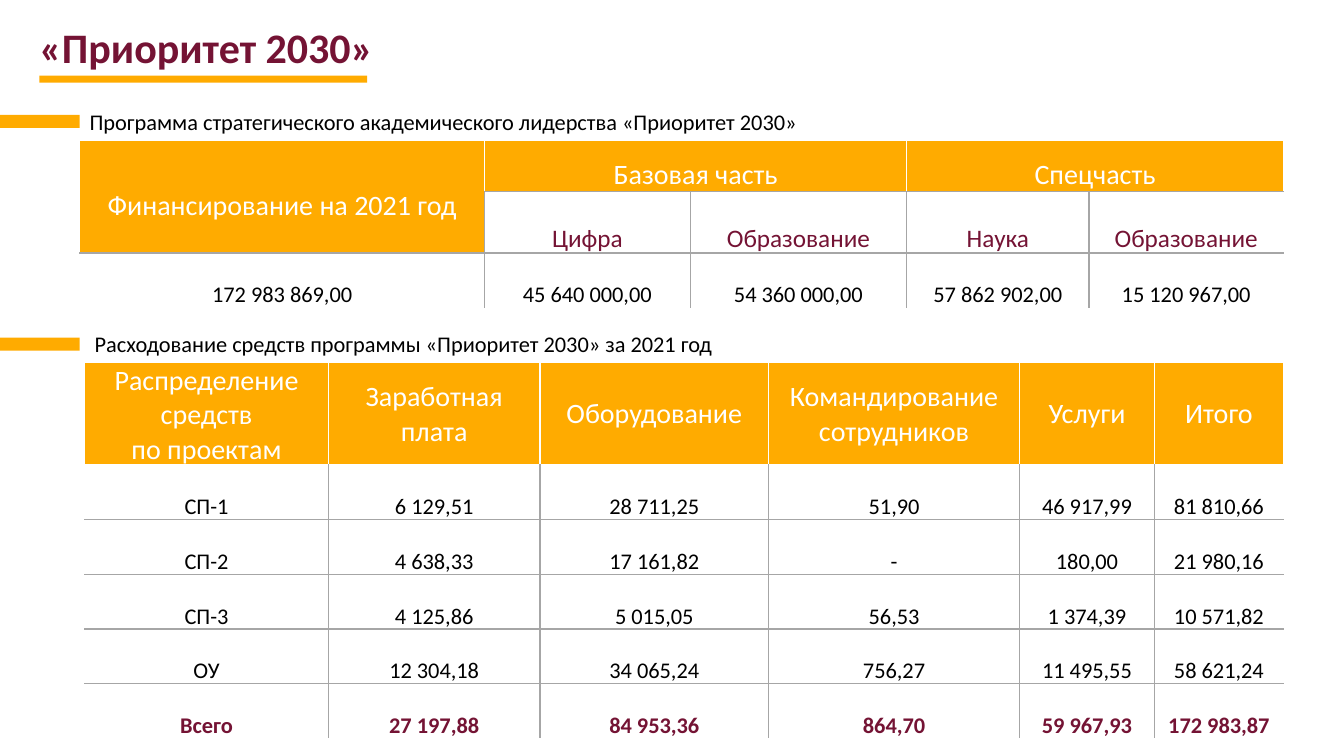
from lxml.etree import SubElement
from pptx import Presentation
from pptx.dml.color import RGBColor
from pptx.enum.shapes import MSO_SHAPE as Shape
from pptx.enum.text import MSO_ANCHOR as Anchor, PP_ALIGN as Align
from pptx.oxml.ns import qn
from pptx.util import Inches, Pt

COLORS = {"amber": "FFAB00", "wine": "741334", "black": "000000",
          "white": "FFFFFF", "gray": "A6A6A6"}
WIDTH, HEIGHT = Inches(13.33), Inches(7.5)
SIDES = {"a:lnL": (0, -1), "a:lnR": (0, 1), "a:lnT": (-1, 0), "a:lnB": (1, 0)}

# Heights in a section, in percent of the slide height
LABEL_HEIGHT, BAR_OFFSET, BAR_HEIGHT = 4.93, 1.6, 1.73
BAR_WIDTH = 5.93

FUNDING = {
    "columns": [402, 204, 215, 181, 193],
    "rows": [50, 61, 55],
    "cells": [
        ["Финансирование на 2021 год", "Базовая часть", "", "Спецчасть", ""],
        ["", "Цифра", "Образование", "Наука", "Образование"],
        ["172 983 869,00", "45 640 000,00", "54 360 000,00",
         "57 862 902,00", "15 120 967,00"],
    ],
    "merges": [((0, 0), (1, 0)), ((0, 1), (0, 2)), ((0, 3), (0, 4))],
    "header": {(0, column) for column in range(5)} | {(1, 0)},
    "header_edge": "gray",
    "header_spacing": 1.5,
    "row_formats": {1: {"size": 18, "color": "wine"}},
}
SPENDING = {
    "columns": [242, 210, 227, 249, 134, 128],
    "rows": [100] + [54] * 5,
    "cells": [
        ["Распределение средств\nпо проектам", "Заработная плата", "Оборудование",
         "Командирование сотрудников", "Услуги", "Итого"],
        ["СП-1", "6 129,51", "28 711,25", "51,90", "46 917,99", "81 810,66"],
        ["СП-2", "4 638,33", "17 161,82", "-", "180,00", "21 980,16"],
        ["СП-3", "4 125,86", "5 015,05", "56,53", "1 374,39", "10 571,82"],
        ["ОУ", "12 304,18", "34 065,24", "756,27", "11 495,55", "58 621,24"],
        ["Всего", "27 197,88", "84 953,36", "864,70", "59 967,93", "172 983,87"],
    ],
    "merges": [],
    "header": {(0, column) for column in range(6)},
    "header_edge": "white",
    "header_spacing": 1.0,
    "row_formats": {5: {"color": "wine", "bold": True}},
}


def place(left, top, width, height):
    """Turn percentages of the slide into lengths."""
    return (int(WIDTH * left / 100), int(HEIGHT * top / 100),
            int(WIDTH * width / 100), int(HEIGHT * height / 100))


def write(frame, text, size=16, color="black", bold=False, align=Align.LEFT,
          spacing=1.0):
    frame.text = text
    frame.word_wrap = True
    for paragraph in frame.paragraphs:
        paragraph.alignment = align
        paragraph.line_spacing = spacing
        font = paragraph.runs[0].font
        font.name, font.size, font.bold = "Calibri", Pt(size), bold
        font.color.rgb = RGBColor.from_string(COLORS[color])


def add_bar(slide, box):
    bar = slide.shapes.add_shape(Shape.RECTANGLE, *place(*box))
    bar.shadow.inherit = False
    bar.fill.solid()
    bar.fill.fore_color.rgb = RGBColor.from_string(COLORS["amber"])
    bar.line.fill.background()


def add_title(slide, left, top, width, height):
    title = slide.shapes.title
    title.left, title.top, title.width, title.height = place(left, top, width, height)
    write(title.text_frame, "«Приоритет 2030»", size=30, color="wine", bold=True,
          spacing=0.9)
    title.text_frame.vertical_anchor = Anchor.MIDDLE
    add_bar(slide, (left + 0.75, top + height, 24.38, 0.93))


def edge_color(data, here, there):
    """Outer and header edges are white, edges in the body are gray."""
    row, column = there
    if not (0 <= row < len(data["rows"]) and 0 <= column < len(data["columns"])):
        return "white"
    header_cells = len({here, there} & data["header"])
    return ("gray", data["header_edge"], "white")[header_cells]


def format_cell(cell, data, row, column):
    properties = cell._tc.get_or_add_tcPr()
    for tag, (down, right) in SIDES.items():
        color = edge_color(data, (row, column), (row + down, column + right))
        line = SubElement(properties, qn(tag), w=str(Pt(1)))
        fill = SubElement(line, qn("a:solidFill"))
        SubElement(fill, qn("a:srgbClr"), val=COLORS[color])
    cell.margin_left = cell.margin_right = cell.margin_top = Inches(0.01)
    cell.margin_bottom = 0
    cell.vertical_anchor = Anchor.MIDDLE
    text = data["cells"][row][column]
    if (row, column) in data["header"]:
        cell.fill.solid()
        cell.fill.fore_color.rgb = RGBColor.from_string(COLORS["amber"])
        style = {"size": 20, "color": "white", "spacing": data["header_spacing"]}
    else:
        cell.fill.background()
        style = {"spacing": 2.0, **data["row_formats"].get(row, {})}
    if text:
        write(cell.text_frame, text, align=Align.CENTER, **style)


def add_data_table(slide, box, data):
    left, top, width, height = place(*box)
    columns, rows = data["columns"], data["rows"]
    table = slide.shapes.add_table(len(rows), len(columns), left, top,
                                   width, height).table
    table.first_row = table.horz_banding = False
    for column, share in zip(table.columns, columns):
        column.width = int(width * share / sum(columns))
    for row, share in zip(table.rows, rows):
        row.height = int(height * share / sum(rows))
    for first, last in data["merges"]:
        table.cell(*first).merge(table.cell(*last))
    for row in range(len(rows)):
        for column in range(len(columns)):
            format_cell(table.cell(row, column), data, row, column)


def add_section(slide, box, label, label_width, data):
    """Amber bar at the slide edge, a label and the table under it."""
    left, top, width, height = box
    add_bar(slide, (0, top + BAR_OFFSET, BAR_WIDTH, BAR_HEIGHT))
    text_box = slide.shapes.add_textbox(*place(left, top, label_width, LABEL_HEIGHT))
    write(text_box.text_frame, label)
    add_data_table(slide, (left, top + LABEL_HEIGHT, width, height - LABEL_HEIGHT), data)


def main():
    presentation = Presentation()
    presentation.slide_width, presentation.slide_height = WIDTH, HEIGHT
    slide = presentation.slides.add_slide(presentation.slide_layouts[5])
    add_title(slide, 2.18, 3.2, 65.34, 6.8)
    add_section(slide, (5.93, 13.6, 89.57, 27.06),
                "Программа стратегического академического лидерства «Приоритет 2030»",
                82.82, FUNDING)
    add_section(slide, (6.3, 43.07, 89.2, 54.4),
                "Расходование средств программы «Приоритет 2030» за 2021 год",
                93.7, SPENDING)
    presentation.save("out.pptx")


if __name__ == "__main__":
    main()
